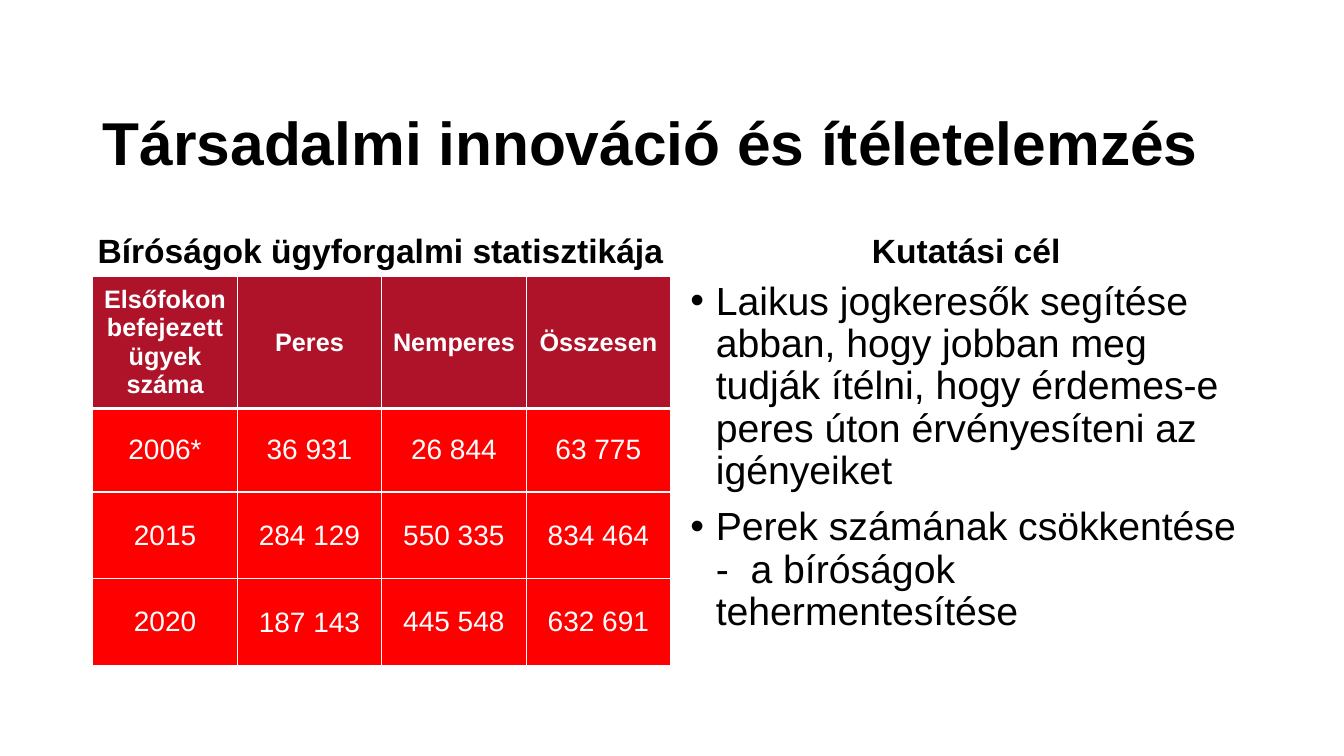
from dataclasses import dataclass

from lxml import etree
from pptx import Presentation
from pptx import util as u
from pptx.dml.color import RGBColor
from pptx.enum import text
from pptx.oxml import ns

FONT = "Arial"
BLACK, WHITE, CRIMSON, RED = "000000", "FFFFFF", "AE132A", "FF0000"
LEFT, CENTER = text.PP_ALIGN.LEFT, text.PP_ALIGN.CENTER
TOP, MIDDLE, BOTTOM = (text.MSO_ANCHOR.TOP, text.MSO_ANCHOR.MIDDLE,
                       text.MSO_ANCHOR.BOTTOM)


@dataclass
class TextBlock:
    box: tuple[float, float, float, float]  # left, top, width, height in cm
    lines: list[str]
    size: float
    bold: bool = True
    align: text.PP_ALIGN = LEFT
    anchor: text.MSO_ANCHOR = BOTTOM
    before: float = 10
    bullet: bool = False


BLOCKS = [
    TextBlock((2.34, 2.67, 29.72, 2.01),
              ["Társadalmi innováció és ítéletelemzés"],
              43.2, anchor=MIDDLE, before=0),
    TextBlock((2.21, 4.65, 14.81, 2.29),
              ["Bíróságok ügyforgalmi statisztikája"], 24),
    TextBlock((17.15, 4.67, 14.4, 2.29), ["Kutatási cél"], 24, align=CENTER),
    TextBlock((17.15, 6.96, 14.4, 10.24),
              ["Laikus jogkeresők segítése abban, hogy jobban meg tudják ítélni, "
               "hogy érdemes-e peres úton érvényesíteni az igényeiket",
               "Perek számának csökkentése -  a bíróságok tehermentesítése"],
              28, bold=False, anchor=TOP, bullet=True),
]

CASES = [
    ["Elsőfokon befejezett ügyek száma", "Peres", "Nemperes", "Összesen"],
    ["2006*", "36 931", "26 844", "63 775"],
    ["2015", "284 129", "550 335", "834 464"],
    ["2020", "187 143", "445 548", "632 691"],
]
ROW_HEIGHTS = [3.33, 2.11, 2.18, 2.18]
COL_WIDTH = 3.64
TIGHT_CELLS = {(2, 1), (3, 1)}


def rgb(value: str) -> RGBColor:
    return RGBColor.from_string(value)


def set_all(obj, values: dict) -> None:
    for name, value in values.items():
        setattr(obj, name, value)


def write(p, words: str, size: float, bold: bool, color: str) -> None:
    r = p.add_run()
    r.text = words
    set_all(r.font, {"name": FONT, "size": u.Pt(size), "bold": bold})
    r.font.color.rgb = rgb(color)


def add_bullet(p) -> None:
    pPr = p._p.get_or_add_pPr()
    indent = u.Cm(0.64)
    pPr.set("marL", str(indent))
    pPr.set("indent", str(-indent))
    etree.SubElement(pPr, ns.qn("a:buFont"), typeface=FONT)
    etree.SubElement(pPr, ns.qn("a:buChar"), char="•")


def add_block(s, block: TextBlock) -> None:
    tf = s.shapes.add_textbox(*map(u.Cm, block.box)).text_frame
    set_all(tf, {"word_wrap": True, "vertical_anchor": block.anchor})
    for i, line in enumerate(block.lines):
        p = tf.add_paragraph() if i else tf.paragraphs[0]
        set_all(p, {"alignment": block.align, "line_spacing": 0.9,
                    "space_before": u.Pt(block.before)})
        if block.bullet:
            add_bullet(p)
        write(p, line, block.size, block.bold, BLACK)


def add_borders(cell, widths: dict[str, float]) -> None:
    tcPr = cell._tc.get_or_add_tcPr()
    for i, (side, width) in enumerate(widths.items()):
        ln = etree.Element(ns.qn(f"a:ln{side}"), w=str(u.Pt(width)))
        fill = etree.SubElement(ln, ns.qn("a:solidFill"))
        etree.SubElement(fill, ns.qn("a:srgbClr"), val=WHITE)
        tcPr.insert(i, ln)


def add_case_table(s) -> None:
    cols = len(CASES[0])
    table = s.shapes.add_table(
        len(CASES), cols, u.Cm(2.34), u.Cm(6.96),
        u.Cm(COL_WIDTH * cols), u.Cm(sum(ROW_HEIGHTS))).table
    for col in table.columns:
        col.width = u.Cm(COL_WIDTH)
    for i, (row, height) in enumerate(zip(CASES, ROW_HEIGHTS)):
        table.rows[i].height = u.Cm(height)
        header = i == 0
        for j, words in enumerate(row):
            cell = table.cell(i, j)
            tight = (i, j) in TIGHT_CELLS
            inset = u.Cm(0.03 if tight else 0.13)
            set_all(cell, {"vertical_anchor": MIDDLE, "margin_left": inset,
                           "margin_right": inset, "margin_top": inset,
                           "margin_bottom": 0 if tight else inset})
            cell.fill.solid()
            cell.fill.fore_color.rgb = rgb(CRIMSON if header else RED)
            add_borders(cell, {"L": 1, "R": 1, "T": 3 if i == 1 else 1,
                               "B": 3 if header else 1})
            p = cell.text_frame.paragraphs[0]
            set_all(p, {"alignment": CENTER,
                        "space_before": u.Pt(0 if header else 6)})
            write(p, words, 18 if header else 20, header, WHITE)


def main() -> None:
    prs = Presentation()
    set_all(prs, {"slide_width": u.Cm(33.87), "slide_height": u.Cm(19.05)})
    s = prs.slides.add_slide(prs.slide_layouts[6])

    # Title, headings and research goals
    for block in BLOCKS:
        add_block(s, block)

    # Court case statistics
    add_case_table(s)

    prs.save("out.pptx")


if __name__ == "__main__":
    main()
